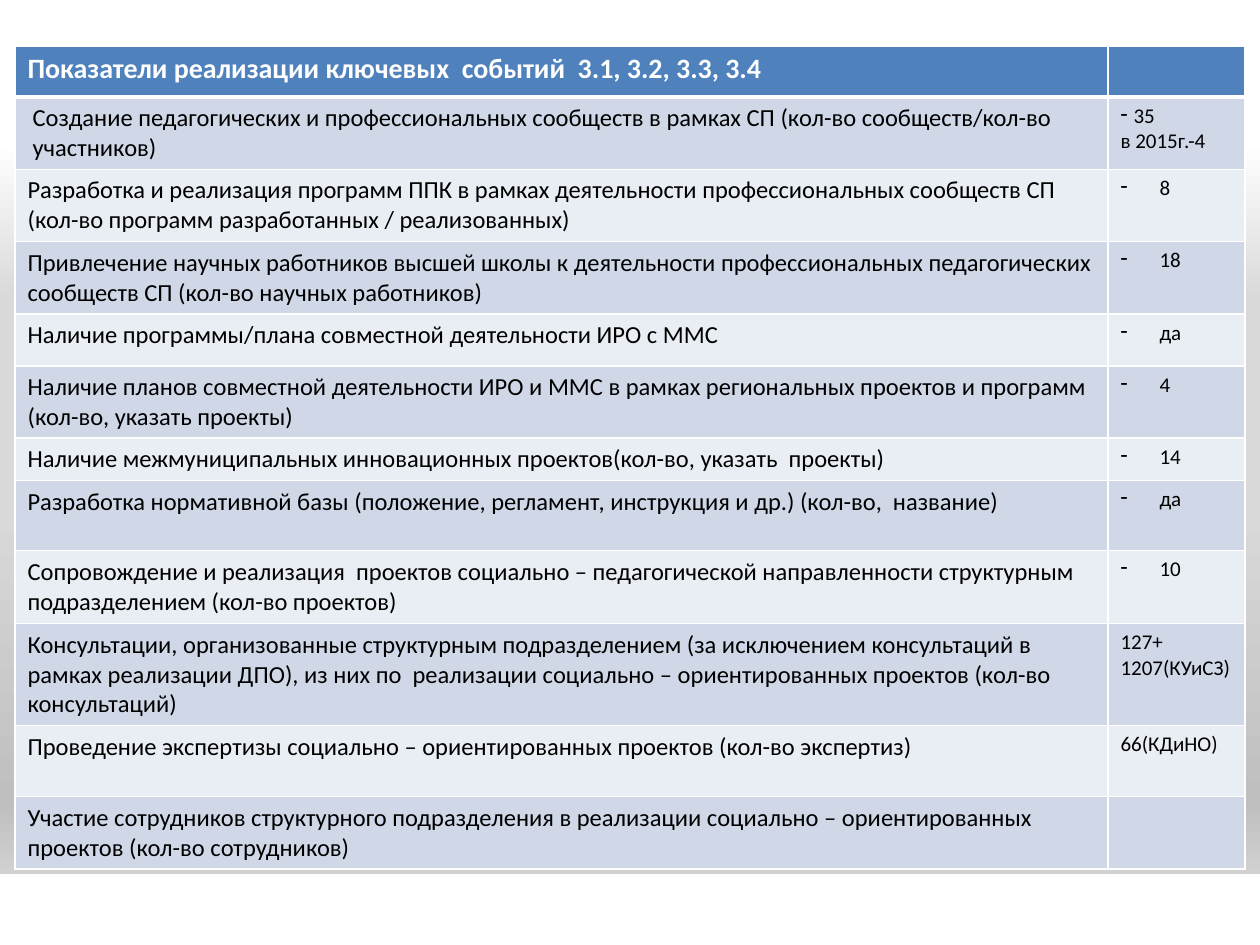
from lxml.etree import SubElement
from pptx import Presentation
from pptx.dml.color import RGBColor
from pptx.enum.shapes import MSO_SHAPE as Shape
from pptx.oxml.ns import qn
from pptx.util import Pt

PX = 914400 / 126
SLIDE_W, SLIDE_H = 1260, 945
FONT = "Calibri"
WHITE, BLACK, HEADER_BLUE = "FFFFFF", "000000", "4F81BD"
BANDS = ("D0D8E8", "E9EDF4")
GRADIENT = [(0, WHITE), (15, WHITE), (32, "D9D9D9"), (54, "D9D9D9"),
            (85, "BFBFBF"), (100, "E6E6E6")]

HEADING = "Показатели реализации ключевых  событий  3.1, 3.2, 3.3, 3.4"
HEADING_H = 51
COLUMNS = (1093, 137)
NARROW, WIDE = 13, 39  # hanging indents of the dashes
FIRST_LABEL_INDENT = 5
FIRST_SPACED_ROW = 4

# row height, indicator, value lines, hanging dash indent of the first line
INDICATORS = [
    (72, "Создание педагогических и профессиональных сообществ в рамках СП "
         "(кол-во сообществ/кол-во участников)", ["35", "в 2015г.-4"], NARROW),
    (72, "Разработка и реализация программ ППК в рамках деятельности профессиональных "
         "сообществ СП (кол-во программ разработанных / реализованных)", ["8"], WIDE),
    (72, "Привлечение научных работников высшей школы к деятельности профессиональных "
         "педагогических сообществ СП (кол-во научных работников)", ["18"], WIDE),
    (52, "Наличие программы/плана совместной деятельности ИРО с ММС", ["да"], WIDE),
    (72, "Наличие планов совместной деятельности ИРО и ММС в рамках региональных "
         "проектов и программ (кол-во, указать проекты)", ["4"], WIDE),
    (42, "Наличие межмуниципальных инновационных проектов(кол-во, указать  проекты)",
     ["14"], WIDE),
    (70, "Разработка нормативной базы (положение, регламент, инструкция и др.) "
         "(кол-во,  название)", ["да"], WIDE),
    (73, "Сопровождение и реализация  проектов социально – педагогической "
         "направленности структурным подразделением (кол-во проектов)", ["10"], WIDE),
    (102, "Консультации, организованные структурным подразделением (за исключением "
          "консультаций в рамках реализации ДПО), из них по  реализации социально – "
          "ориентированных проектов (кол-во консультаций)", ["127+", "1207(КУиСЗ)"], 0),
    (71, "Проведение экспертизы социально – ориентированных проектов (кол-во экспертиз)",
     ["66(КДиНО)"], 0),
    (72, "Участие сотрудников структурного подразделения в реализации социально – "
         "ориентированных проектов (кол-во сотрудников)", [], 0),
]


def px(length):
    return round(length * PX)


def rgb(value):
    return RGBColor.from_string(value)


def paint_background(slide):
    fill = slide.background.fill
    fill.gradient()
    fill.gradient_angle = 270
    stops = slide.background._cSld.find(".//" + qn("a:gsLst"))
    for stop in list(stops):
        stops.remove(stop)
    for position, color in GRADIENT:
        stop = SubElement(stops, qn("a:gs"), pos=str(position * 1000))
        SubElement(stop, qn("a:srgbClr"), val=color)


def add_footer_strip(slide, left, top, width, height):
    strip = slide.shapes.add_shape(Shape.RECTANGLE, *map(px, (left, top, width, height)))
    strip.shadow.inherit = False
    strip.fill.solid()
    strip.fill.fore_color.rgb = rgb(WHITE)
    strip.line.fill.background()


def style_cell(cell, color, bottom=1):
    """Draw the white borders, then fill the cell."""
    properties = cell._tc.get_or_add_tcPr()
    for side, points in (("L", 1), ("R", 1), ("T", 1), ("B", bottom)):
        line = SubElement(properties, qn(f"a:ln{side}"), w=str(Pt(points)))
        SubElement(SubElement(line, qn("a:solidFill")), qn("a:srgbClr"), val=WHITE)
    cell.fill.solid()
    cell.fill.fore_color.rgb = rgb(color)


def write_lines(cell, lines, size, color=BLACK, bold=False, dash=0):
    """Fill the cell; a non-zero dash hangs the first line on a dash bullet."""
    frame = cell.text_frame
    for index, line in enumerate(lines):
        paragraph = frame.add_paragraph() if index else frame.paragraphs[0]
        paragraph.text = line
        if dash and not index:
            properties = paragraph._p.get_or_add_pPr()
            properties.set("marL", str(px(dash)))
            properties.set("indent", str(-px(dash)))
            SubElement(properties, qn("a:buChar"), char="-")
        font = paragraph.font
        font.name, font.size, font.bold = FONT, Pt(size), bold
        font.color.rgb = rgb(color)


def add_indicator_table(slide, left, top):
    heights = [HEADING_H] + [row[0] for row in INDICATORS]
    table = slide.shapes.add_table(len(heights), len(COLUMNS), px(left), px(top),
                                   px(sum(COLUMNS)), px(sum(heights))).table
    for column, width in zip(table.columns, COLUMNS):
        column.width = px(width)
    for row, height in zip(table.rows, heights):
        row.height = px(height)

    for cell in table.rows[0].cells:
        style_cell(cell, HEADER_BLUE, bottom=3)
    write_lines(table.cell(0, 0), [HEADING], 16, WHITE, bold=True)

    for number, (_, indicator, values, dash) in enumerate(INDICATORS, 1):
        label, value = table.rows[number].cells
        for cell in (label, value):
            style_cell(cell, BANDS[(number - 1) % 2])
        write_lines(label, [indicator], 14)
        write_lines(value, values, 12, dash=dash)
        if number >= FIRST_SPACED_ROW:
            label.text_frame.paragraphs[0].space_after = Pt(10)
    first_label = table.cell(1, 0).text_frame.paragraphs[0]
    first_label._p.get_or_add_pPr().set("marL", str(px(FIRST_LABEL_INDENT)))


def main():
    deck = Presentation()
    deck.slide_width, deck.slide_height = px(SLIDE_W), px(SLIDE_H)
    slide = deck.slides.add_slide(deck.slide_layouts[6])
    paint_background(slide)
    add_footer_strip(slide, 0, 874, SLIDE_W, SLIDE_H - 874)
    add_indicator_table(slide, 15, 46)
    deck.save("out.pptx")


if __name__ == "__main__":
    main()
